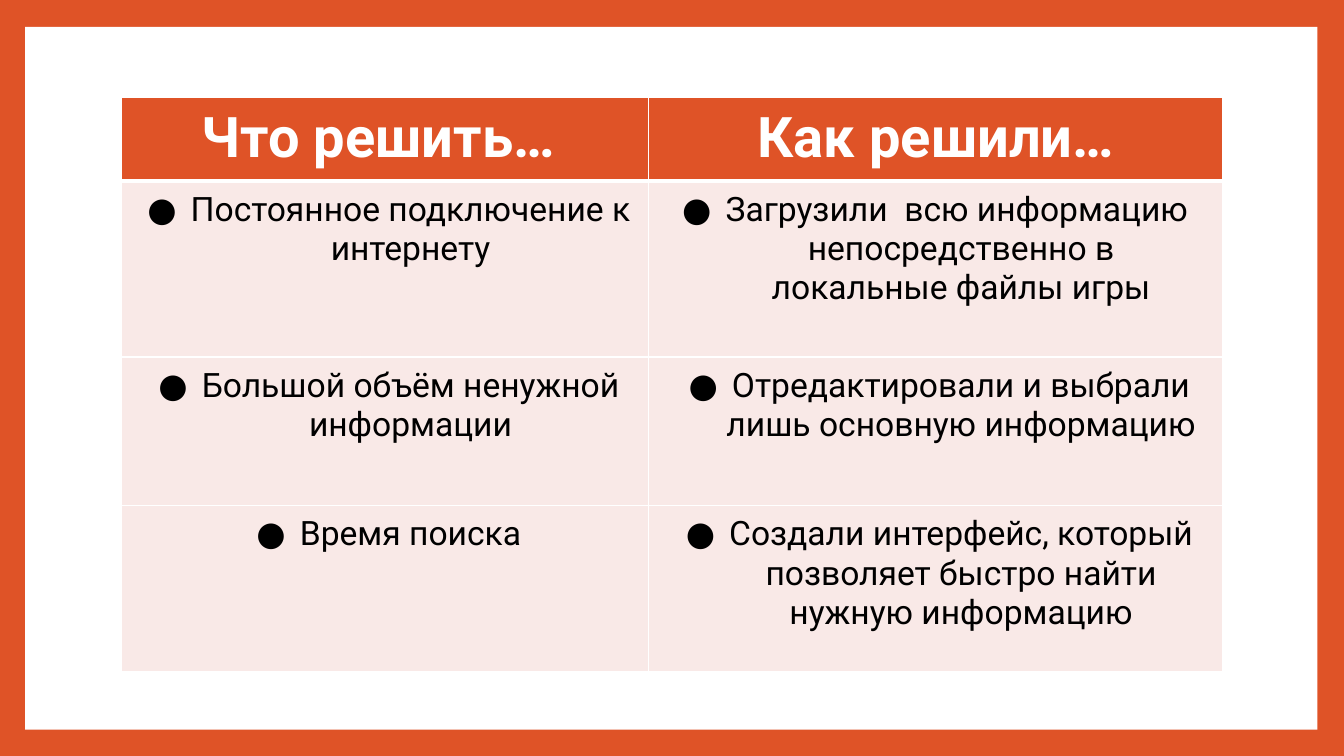
from pptx import Presentation
from pptx.dml.color import RGBColor
from pptx.enum.shapes import MSO_SHAPE
from pptx.enum.text import PP_ALIGN
from pptx.oxml.ns import qn
from pptx.util import Pt
from lxml import etree

RECTANGLE = MSO_SHAPE.RECTANGLE
CENTER = PP_ALIGN.CENTER
FONT = "Roboto"
COLORS = {"orange": "DF5327", "white": "FFFFFF", "pink": "F9E9E7", "black": "000000"}
COLUMN_WIDTHS = (376.5, 410)
ROW_HEIGHTS = (59.5, 126, 106, 119)
ROWS = (
    ("Что решить… ", "Как решили…"),
    ("Постоянное подключение к интернету",
     "Загрузили  всю информацию  непосредственно в локальные файлы игры"),
    ("Большой объём ненужной информации",
     "Отредактировали и выбрали лишь основную информацию"),
    ("Время поиска",
     "Создали интерфейс, который позволяет быстро найти нужную информацию"),
)


def color(name):
    """Return the named colour."""
    return RGBColor.from_string(COLORS[name])


def add_color(parent, name):
    """Append a colour element to an XML parent."""
    etree.SubElement(parent, qn("a:srgbClr"), val=COLORS[name])


def set_borders(cell, top, bottom):
    """Draw white borders around a table cell."""
    properties = cell._tc.get_or_add_tcPr()
    widths = {"a:lnL": 1, "a:lnR": 1, "a:lnT": top, "a:lnB": bottom}
    for index, (side, width) in enumerate(widths.items()):
        line = etree.Element(qn(side), w=str(Pt(width)))
        add_color(etree.SubElement(line, qn("a:solidFill")), "white")
        properties.insert(index, line)


def add_bullet(para):
    """Give a paragraph a round bullet with a hanging indent."""
    properties = para._p.get_or_add_pPr()
    properties.set("marL", str(Pt(36)))
    properties.set("indent", str(Pt(-31)))
    add_color(etree.SubElement(properties, qn("a:buClr")), "black")
    etree.SubElement(properties, qn("a:buFont"), typeface=FONT)
    etree.SubElement(properties, qn("a:buChar"), char="●")


def fill_cell(cell, text, is_header):
    """Write and format one cell of the table."""
    cell.fill.solid()
    cell.fill.fore_color.rgb = color("orange" if is_header else "pink")
    cell.margin_left = cell.margin_right = Pt(13)
    cell.margin_top = cell.margin_bottom = Pt(6.5)
    para = cell.text_frame.paragraphs[0]
    para.alignment = CENTER
    if not is_header:
        add_bullet(para)
    span = para.add_run()
    span.text = text
    span.font.name = FONT
    span.font.size = Pt(40 if is_header else 24)
    span.font.bold = is_header
    span.font.color.rgb = color("white" if is_header else "black")


def add_frame(page, left, top, width, height):
    """Place the white panel on the orange background."""
    page.background.fill.solid()
    page.background.fill.fore_color.rgb = color("orange")
    panel = page.shapes.add_shape(RECTANGLE, Pt(left), Pt(top), Pt(width), Pt(height))
    panel.shadow.inherit = False
    panel.fill.solid()
    panel.fill.fore_color.rgb = color("white")
    panel.line.fill.background()


def add_solutions(page, left, top):
    """Place the table of problems and solutions."""
    table = page.shapes.add_table(
        len(ROWS), len(COLUMN_WIDTHS), Pt(left), Pt(top),
        Pt(sum(COLUMN_WIDTHS)), Pt(sum(ROW_HEIGHTS))).table
    table.horz_banding = False
    for column, width in zip(table.columns, COLUMN_WIDTHS):
        column.width = Pt(width)
    for index, (row, height, texts) in enumerate(zip(table.rows, ROW_HEIGHTS, ROWS)):
        row.height = Pt(height)
        for cell, text in zip(row.cells, texts):
            fill_cell(cell, text, index == 0)
            set_borders(cell, 3 if index == 1 else 1, 3 if index == 0 else 1)


def main():
    """Build and save the deck."""
    deck = Presentation()
    deck.slide_width, deck.slide_height = Pt(960), Pt(540)
    page = deck.slides.add_slide(deck.slide_layouts[6])
    add_frame(page, 18, 19.25, 923, 502)
    add_solutions(page, 87, 69.25)
    deck.save("out.pptx")


if __name__ == "__main__":
    main()
